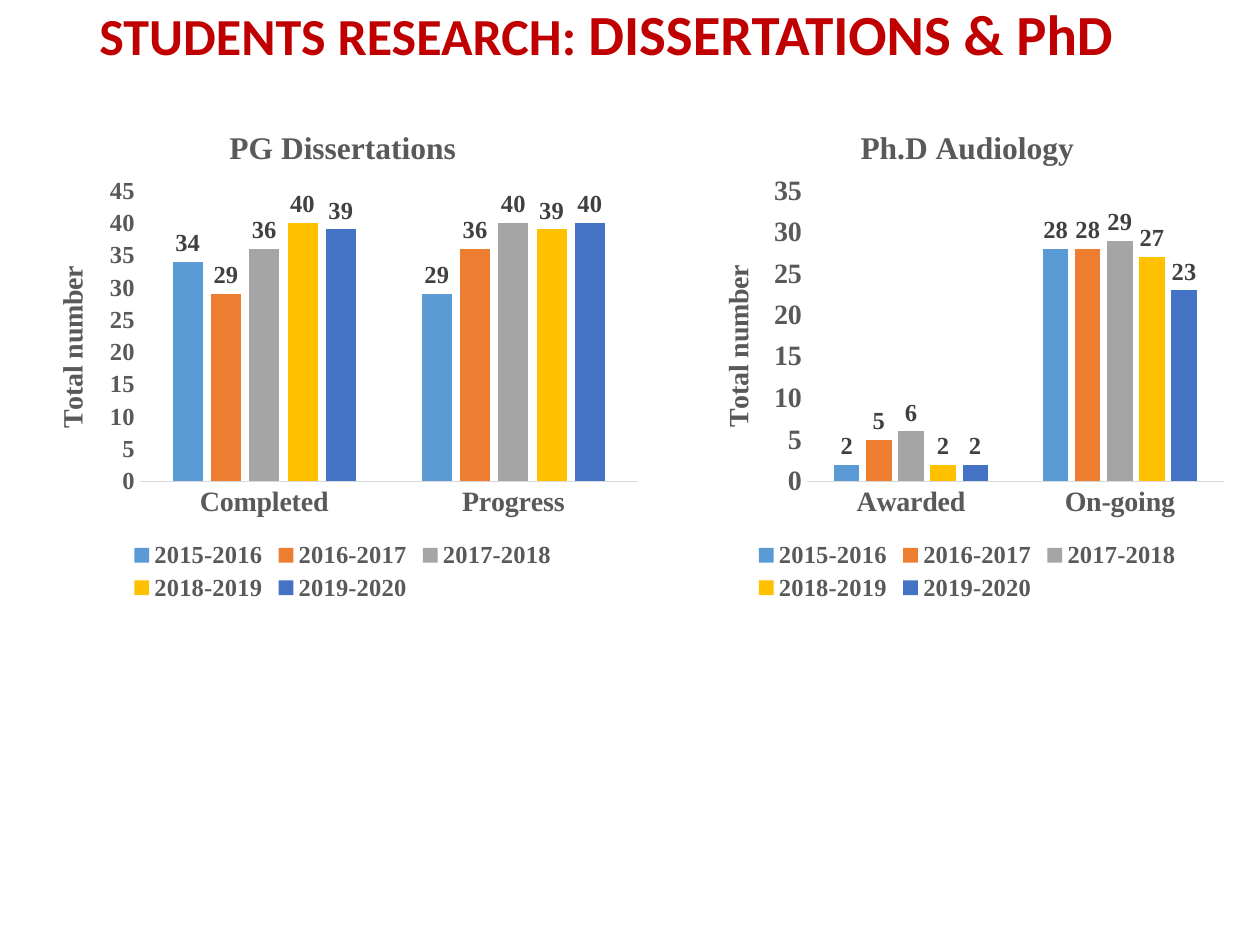
from lxml import etree
from pptx import Presentation
from pptx.chart.data import CategoryChartData
from pptx.dml.color import RGBColor
from pptx.enum.chart import (XL_CHART_TYPE, XL_LABEL_POSITION,
                             XL_LEGEND_POSITION, XL_TICK_MARK)
from pptx.enum.text import MSO_ANCHOR, MSO_AUTO_SIZE, PP_ALIGN
from pptx.oxml.ns import qn
from pptx.util import Cm, Pt

COLUMNS = XL_CHART_TYPE.COLUMN_CLUSTERED
OUTSIDE_END = XL_LABEL_POSITION.OUTSIDE_END
LEGEND_BOTTOM = XL_LEGEND_POSITION.BOTTOM
NO_TICK = XL_TICK_MARK.NONE
MIDDLE = MSO_ANCHOR.MIDDLE
NO_AUTOFIT = MSO_AUTO_SIZE.NONE
LEFT = PP_ALIGN.LEFT

SERIF = "Times New Roman"
RED, GREY, DARK, PALE = "C00000", "595959", "404040", "D9D9D9"
SERIES = {
    "2015-2016": "5B9BD5",
    "2016-2017": "ED7D31",
    "2017-2018": "A5A5A5",
    "2018-2019": "FFC000",
    "2019-2020": "4472C4",
}


def rgb(value):
    return RGBColor.from_string(value)


def set_font(font, size, color=GREY, name=SERIF, bold=True):
    font.size, font.name, font.bold = Pt(size), name, bold
    font.color.rgb = rgb(color)


def add_text(p, text, **fmt):
    r = p.add_run()
    r.text = text
    set_font(r.font, **fmt)


def add_title(slide, left, top, width, height):
    sp = slide.shapes.title
    sp.left, sp.top, sp.width, sp.height = left, top, width, height
    tf = sp.text_frame
    tf.word_wrap, tf.auto_size, tf.vertical_anchor = True, NO_AUTOFIT, MIDDLE
    p = tf.paragraphs[0]
    p.alignment, p.line_spacing = LEFT, 0.9
    add_text(p, "STUDENTS RESEARCH: ", size=29.7, color=RED, name="Calibri")
    add_text(p, "DISSERTATIONS & PhD", size=32.4, color=RED, name="Calibri")
    set_font(p.font, 32.4, RED, "Calibri")
    p.add_line_break()


def set_plot_box(chart, x, y, w, h):
    """Place the inner plot area, in fractions of the chart."""
    area = chart.plots[0]._element.getparent()
    for old in area.findall(qn("c:layout")):
        area.remove(old)
    layout = etree.Element(qn("c:layout"))
    manual = etree.SubElement(layout, qn("c:manualLayout"))
    for tag, value in (("layoutTarget", "inner"), ("xMode", "edge"), ("yMode", "edge"),
                       ("x", x), ("y", y), ("w", w), ("h", h)):
        etree.SubElement(manual, qn("c:" + tag), val=str(value))
    area.insert(0, layout)


def add_column_chart(slide, left, top, width, height, title, data, top_value,
                     tick_size, plot_box):
    chart_data = CategoryChartData()
    chart_data.categories = list(data)
    for name, values in zip(SERIES, zip(*data.values())):
        chart_data.add_series(name, values)
    chart = slide.shapes.add_chart(COLUMNS, left, top, width, height, chart_data).chart
    chart.font.size, chart.font.name = Pt(10), "Calibri"

    # Titles
    chart.has_title = True
    add_text(chart.chart_title.text_frame.paragraphs[0], title, size=18)
    values = chart.value_axis
    add_text(values.axis_title.text_frame.paragraphs[0], "Total number", size=16)

    # Axes
    values.has_major_gridlines = False
    values.minimum_scale, values.maximum_scale, values.major_unit = 0, top_value, 5
    values.format.line.fill.background()
    categories = chart.category_axis
    categories.format.line.color.rgb = rgb(PALE)
    categories.format.line.width = Pt(0.75)
    for axis, size in ((values, tick_size), (categories, 16)):
        axis.major_tick_mark = axis.minor_tick_mark = NO_TICK
        set_font(axis.tick_labels.font, size)

    # Columns and their labels
    plot = chart.plots[0]
    plot.gap_width, plot.overlap, plot.vary_by_categories = 219, -27, False
    for series, color in zip(plot.series, SERIES.values()):
        series.format.fill.solid()
        series.format.fill.fore_color.rgb = rgb(color)
        labels = series.data_labels
        labels.show_value, labels.position = True, OUTSIDE_END
        set_font(labels.font, 14, DARK)

    # Legend
    chart.has_legend = True
    chart.legend.position = LEGEND_BOTTOM
    chart.legend.include_in_layout = False
    set_font(chart.legend.font, 14)
    set_plot_box(chart, *plot_box)


def main():
    prs = Presentation()
    prs.slide_width, prs.slide_height = Cm(25.4), Cm(19.05)
    slide = prs.slides.add_slide(prs.slide_layouts.get_by_name("Title Only"))

    add_title(slide, Cm(1.75), Cm(0.33), Cm(21.9), Cm(2.2))
    top, height = Cm(2.13), Cm(10.1)
    add_column_chart(
        slide, Cm(14.1), top, Cm(10.8), height, "Ph.D Audiology",
        {"Awarded": (2, 5, 6, 2, 2), "On-going": (28, 28, 29, 27, 23)},
        top_value=35, tick_size=16, plot_box=(0.2, 0.17, 0.78, 0.58))
    add_column_chart(
        slide, Cm(0.71), top, Cm(12.4), height, "PG Dissertations",
        {"Completed": (34, 29, 36, 40, 39), "Progress": (29, 36, 40, 39, 40)},
        top_value=45, tick_size=14, plot_box=(0.17, 0.17, 0.81, 0.58))
    prs.save("out.pptx")


if __name__ == "__main__":
    main()
